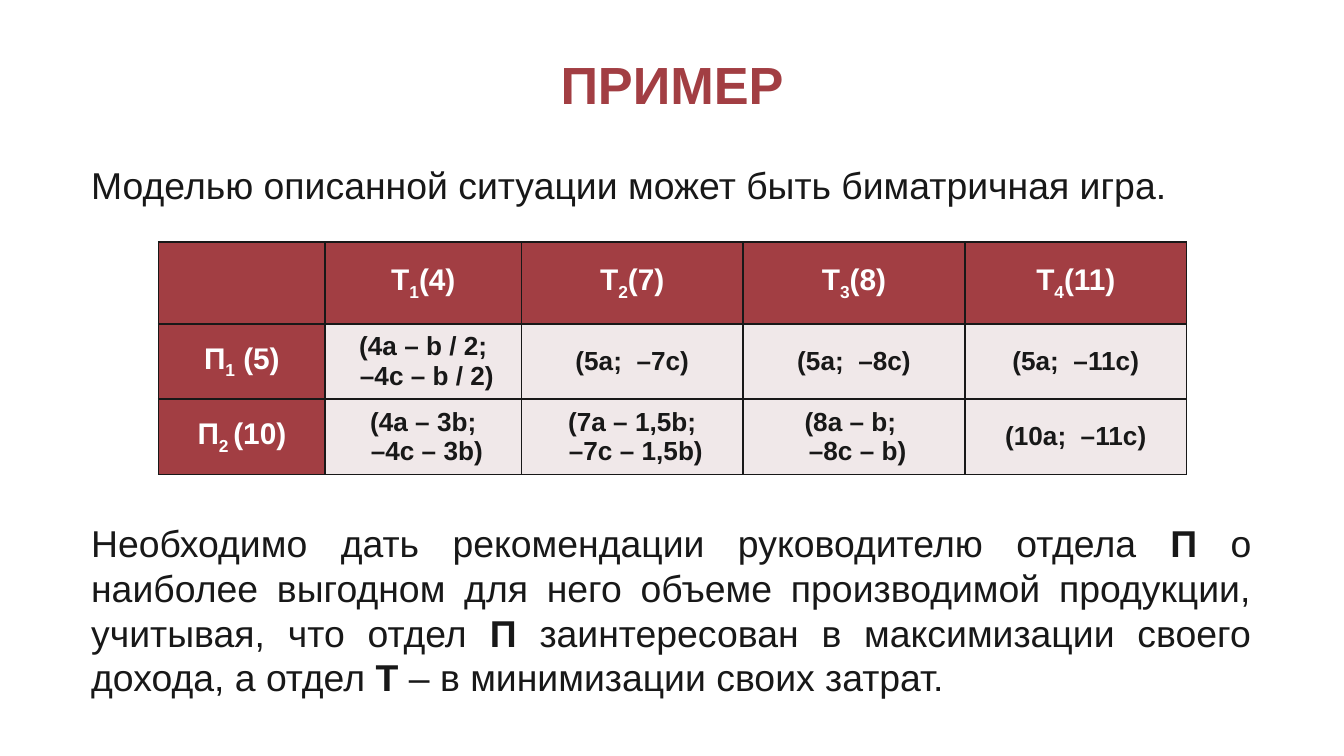
from copy import deepcopy
from dataclasses import dataclass

from pptx import Presentation
from pptx.dml.color import RGBColor
from pptx.enum import text as te
from pptx.oxml import parse_xml
from pptx.oxml.ns import nsdecls, qn
from pptx.util import Inches, Pt


@dataclass(frozen=True)
class Theme:
    font: str = "Arial"
    red: str = "A23E43"
    pale: str = "F0E8E9"
    ink: str = "181818"
    white: str = "FFFFFF"
    title: int = 28
    body: int = 20
    head: int = 16
    cell: int = 14


THEME = Theme()
ALIGN = te.PP_ALIGN

COLS = [1.24, 1.46, 1.65, 1.65, 1.65]
ROWS = [0.61, 0.56, 0.56]
GAME = [
    ["", "Т|1|(4)", "Т|2|(7)", "Т|3|(8)", "Т|4|(11)"],
    ["П|1| (5)", "(4a – b / 2;\n –4c – b / 2)", "(5a;  –7c)",
     "(5a;  –8c)", "(5a;  –11c)"],
    ["П|2 |(10)", "(4a – 3b;\n –4c – 3b)", "(7a – 1,5b;\n –7c – 1,5b)",
     "(8a – b; \n –8c – b)", "(10a;  –11c)"],
]
INTRO = "Моделью описанной ситуации может быть биматричная игра."
TASK = ("Необходимо дать рекомендации руководителю отдела |П| о наиболее "
        "выгодном для него объеме производимой продукции, учитывая, что отдел "
        "|П| заинтересован в максимизации своего дохода, а отдел |Т| – в "
        "минимизации своих затрат.")


def write(frame, words, size, color=THEME.ink, bold=False, align=ALIGN.LEFT,
          sub=False, after=0):
    """Fill a frame; parts between bars are subscript if sub, else bold."""
    para = frame.paragraphs[0]
    para.alignment = align
    para.space_after = Pt(after)
    for row, line in enumerate(words.split("\n")):
        if row:
            para.add_line_break()
        for num, part in enumerate(line.split("|")):
            mark = num % 2 == 1
            run = para.add_run()
            run.text = part
            font = run.font
            font.name, font.size = THEME.font, Pt(size)
            font.bold = bold or (mark and not sub)
            font.color.rgb = RGBColor.from_string(color)
            if mark and sub:
                run._r.get_or_add_rPr().set("baseline", "-25000")
    # A line break takes the type size of the text around it
    for gap in para._p.findall(qn("a:br")):
        gap.insert(0, deepcopy(run._r.rPr))


def add_text(slide, box, words, **style):
    shape = slide.shapes.add_textbox(*map(Inches, box))
    frame = shape.text_frame
    frame.word_wrap = True
    frame.auto_size = te.MSO_AUTO_SIZE.SHAPE_TO_FIT_TEXT
    write(frame, words, THEME.body, **style)


def set_title(slide, box, words):
    title = slide.shapes.title
    title.left, title.top, title.width, title.height = map(Inches, box)
    title.text_frame.vertical_anchor = te.MSO_ANCHOR.MIDDLE
    write(title.text_frame, words, THEME.title, color=THEME.red, bold=True,
          align=ALIGN.CENTER)


def edge(cell):
    props = cell._tc.get_or_add_tcPr()
    for spot, side in enumerate(("lnL", "lnR", "lnT", "lnB")):
        props.insert(spot, parse_xml(
            f'<a:{side} {nsdecls("a")} w="{Pt(1)}"><a:solidFill>'
            f'<a:srgbClr val="{THEME.ink}"/></a:solidFill></a:{side}>'))


def fill_cell(cell, words, head):
    cell.fill.solid()
    cell.fill.fore_color.rgb = RGBColor.from_string(
        THEME.red if head else THEME.pale)
    cell.vertical_anchor = te.MSO_ANCHOR.MIDDLE
    cell.margin_left = cell.margin_right = Inches(0.07)
    cell.margin_top = cell.margin_bottom = 0
    edge(cell)
    if words:
        write(cell.text_frame, words, THEME.head if head else THEME.cell,
              color=THEME.white if head else THEME.ink, bold=True,
              align=ALIGN.CENTER, sub=True)


def add_game(slide, left, top):
    size = Inches(sum(COLS)), Inches(sum(ROWS))
    table = slide.shapes.add_table(
        len(ROWS), len(COLS), Inches(left), Inches(top), *size).table
    table.first_row = table.horz_banding = False
    for col, width in zip(table.columns, COLS):
        col.width = Inches(width)
    for row, height in zip(table.rows, ROWS):
        row.height = Inches(height)
    for r, line in enumerate(GAME):
        for c, words in enumerate(line):
            fill_cell(table.cell(r, c), words, head=r == 0 or c == 0)


def main():
    deck = Presentation()
    deck.slide_width = Inches(10)
    deck.slide_height = deck.slide_width * 9 // 16
    slide = deck.slides.add_slide(deck.slide_layouts[5])
    set_title(slide, (0.5, 0.27, 9, 0.7), "ПРИМЕР")
    add_text(slide, (0.58, 1.16, 8.83, 0.44), INTRO, after=6)
    add_game(slide, 1.18, 1.8)
    add_text(slide, (0.58, 3.82, 8.83, 1.45), TASK, align=ALIGN.JUSTIFY)
    deck.save("out.pptx")


if __name__ == "__main__":
    main()
